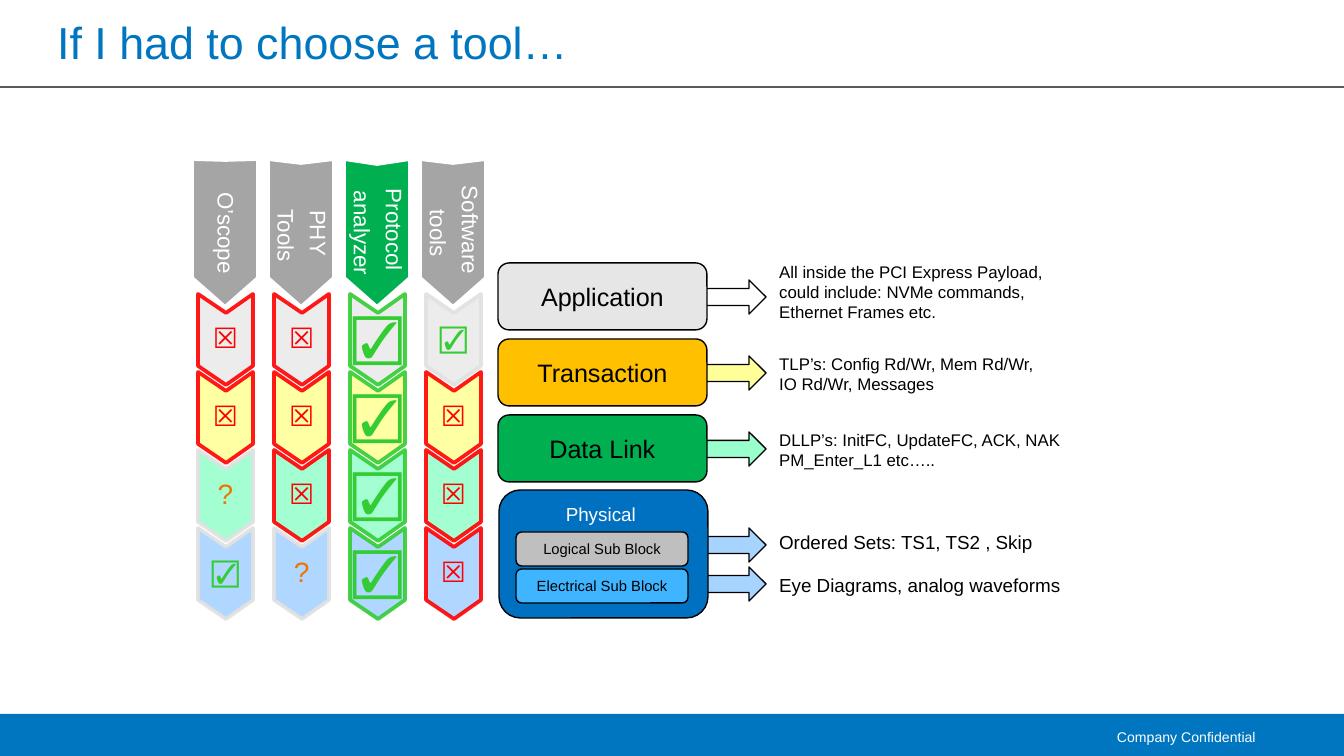
from lxml import etree
from pptx import Presentation
from pptx import util as u
from pptx.dml.color import RGBColor
from pptx.enum import shapes, text
from pptx.oxml.ns import qn

PX = u.Inches(10) / 1344
WIDTH, HEIGHT = 1344, 756
RED, GREEN, ORANGE, PALE = "FF0000", "33CC33", "EC7600", "E1E1E1"
BLUE, BLACK, WHITE, GREY = "0076C0", "000000", "FFFFFF", "A5A5A5"
LEFT, CENTER, RIGHT = text.PP_ALIGN.LEFT, text.PP_ALIGN.CENTER, text.PP_ALIGN.RIGHT
TOP, MIDDLE = text.MSO_ANCHOR.TOP, text.MSO_ANCHOR.MIDDLE
ROUNDED = shapes.MSO_SHAPE.ROUNDED_RECTANGLE


def px(*lengths):
    return [u.Emu(round(length * PX)) for length in lengths]


def rgb(color):
    return RGBColor.from_string(color)


class Painter:
    """Draws styled elements on the current slide."""

    font = "Arial"

    def __init__(self, slide):
        self.slide = slide

    def paint(self, shape, fill, line=None, weight=0.75, opacity=100):
        shape.shadow.inherit = False
        shape.fill.solid()
        shape.fill.fore_color.rgb = rgb(fill)
        if line:
            shape.line.color.rgb = rgb(line)
            shape.line.width = u.Pt(weight)
        else:
            shape.line.fill.background()
        if opacity < 100:
            for color in shape._element.spPr.iter(qn("a:srgbClr")):
                etree.SubElement(color, qn("a:alpha"), val=str(opacity * 1000))

    def add_text(self, shape, lines, size, color, align=CENTER, anchor=MIDDLE, wrap=True,
                 spaced=False):
        frame = shape.text_frame
        frame.word_wrap = wrap
        frame.vertical_anchor = anchor
        for index, line in enumerate(lines):
            paragraph = frame.add_paragraph() if index else frame.paragraphs[0]
            paragraph.alignment = align
            if spaced:
                paragraph.line_spacing = 0.9
                paragraph.space_after = u.Pt(0)
                after = paragraph._p.pPr.find(qn("a:spcAft"))
                after.clear()
                etree.SubElement(after, qn("a:spcPct"), val="35000")
            run = paragraph.add_run()
            run.text = line
            run.font.name = self.font
            run.font.size = u.Pt(size)
            run.font.color.rgb = rgb(color)

    def label(self, box, lines, size, color=BLACK, align=LEFT, anchor=TOP, wrap=False):
        shape = self.slide.shapes.add_textbox(*px(*box))
        self.add_text(shape, lines, size, color, align, anchor, wrap)

    def block(self, kind, box, fill, line=BLACK):
        shape = self.slide.shapes.add_shape(kind, *px(*box))
        self.paint(shape, fill, line)
        return shape

    def layer(self, box, caption, size, fill, color=BLACK, anchor=MIDDLE):
        shape = self.block(ROUNDED, box, fill)
        self.add_text(shape, [caption], size, color, anchor=anchor)

    def arrow(self, y, fill):
        self.block(shapes.MSO_SHAPE.RIGHT_ARROW, (656, y, 110, 34), fill)

    def rule(self, y, color):
        line = self.slide.shapes.add_connector(
            shapes.MSO_CONNECTOR.STRAIGHT, *px(0, y, WIDTH, y))
        line.line.color.rgb = rgb(color)
        line.line.width = u.Pt(0.75)
        etree.SubElement(line._element.spPr, qn("a:effectLst"))

    def chevron(self, center, length, breadth, tip, notch, fill, line, opacity=100):
        x, y = center[0] - length // 2, center[1] - breadth // 2
        shoulder, middle, bottom = x + length - tip, y + breadth // 2, y + breadth
        builder = self.slide.shapes.build_freeform(x, y, scale=PX)
        builder.add_line_segments([
            (shoulder, y), (x + length, middle), (shoulder, bottom),
            (x, bottom), (x + notch, middle)])
        shape = builder.convert_to_shape()
        shape.rotation = 90
        self.paint(shape, fill, line, 2, opacity)
        return shape

    def tool(self, center, lines, fill, notch):
        shape = self.chevron(center, 148, 66, 29, notch, fill, WHITE)
        frame = shape.text_frame
        frame.margin_left = frame.margin_right = u.Inches(0.12)
        frame.margin_top = frame.margin_bottom = 0
        self.add_text(shape, lines, 12, WHITE, spaced=True)

    def verdict(self, center, mark, size, color, fill, line):
        shape = self.chevron(center, 91, 55, 19, 19, fill, line, 90)
        frame = shape.text_frame
        frame.margin_left = frame.margin_right = u.Inches(0.1)
        frame.margin_top = frame.margin_bottom = u.Inches(0.01)
        frame._txBody.bodyPr.set("vert", "vert270")
        self.add_text(shape, [mark], size, color, spaced=True)


def main():
    deck = Presentation()
    deck.slide_width, deck.slide_height = px(WIDTH, HEIGHT)
    painter = Painter(deck.slides.add_slide(deck.slide_layouts[6]))

    painter.block(shapes.MSO_SHAPE.RECTANGLE, (0, 714, WIDTH, 42), BLUE, None)
    painter.rule(87, "595959")
    painter.label((44, 8, 1266, 67), ["If I had to choose a tool…"], 24, BLUE,
                  anchor=MIDDLE, wrap=True)

    layers = [
        ("Application", "E6E6E6", WHITE, 255,
         ["All inside the PCI Express Payload,", "could include: NVMe commands,",
          "Ethernet Frames etc."]),
        ("Transaction", "FFC000", "FFFF99", 347,
         ["TLP’s: Config Rd/Wr, Mem Rd/Wr,", "IO Rd/Wr, Messages"]),
        ("Data Link", "00B050", "99FFCC", 423,
         ["DLLP’s: InitFC, UpdateFC, ACK, NAK", "PM_Enter_L1 etc….."]),
    ]
    for row, (caption, fill, arrow_fill, note_y, note) in enumerate(layers):
        y = 263 + 76 * row
        painter.arrow(y + 17, arrow_fill)
        painter.layer((498, y, 209, 67), caption, 13.5, fill)
        painter.label((766, note_y, 310, 20 * len(note) + 14), note, 9)

    signals = [(528, 524, "Ordered Sets: TS1, TS2 , Skip"),
               (567, 567, "Eye Diagrams, analog waveforms")]
    for arrow_y, note_y, note in signals:
        painter.arrow(arrow_y, "A7D3FF")
        painter.label((766, note_y, 314, 36), [note], 10.1)
    painter.layer((499, 490, 209, 128), "Physical ", 10.1, "0070C0", WHITE, TOP)
    painter.layer((516, 532, 172, 34), "Logical Sub Block", 7.9, "BFBFBF", anchor=TOP)
    painter.layer((516, 569, 172, 34), "Electrical Sub Block", 7.9, "40B5FF", anchor=TOP)

    tools = [
        (["O’scope"], GREY, 1, "☒☒?☑"),
        (["PHY", " Tools"], GREY, 4, "☒☒☒?"),
        (["Protocol ", "analyzer"], "00B050", 5, "☑☑☑☑"),
        (["Software ", "tools"], GREY, 4, "☑☒☒☒"),
    ]
    row_fills = ["EAEAEA", "FFFF99", "99FFCC", "A7D3FF"]
    mark_colors = {"☒": RED, "☑": GREEN, "?": ORANGE}
    for column, (name, fill, notch, marks) in reversed(list(enumerate(tools))):
        x = 225 + 76 * column
        best = set(marks) == {"☑"}
        painter.tool((x, 233), name, fill, notch)
        for row, (mark, row_fill) in enumerate(zip(marks, row_fills)):
            outline = RED if mark == "☒" else GREEN if best else PALE
            painter.verdict((x, 339 + 78 * row), mark, 27 if best else 15,
                            mark_colors[mark], row_fill, outline)

    painter.label((1075, 719, 194, 36), ["Company Confidential"], 7.5, WHITE,
                  RIGHT, MIDDLE, True)
    deck.save("out.pptx")


if __name__ == "__main__":
    main()
